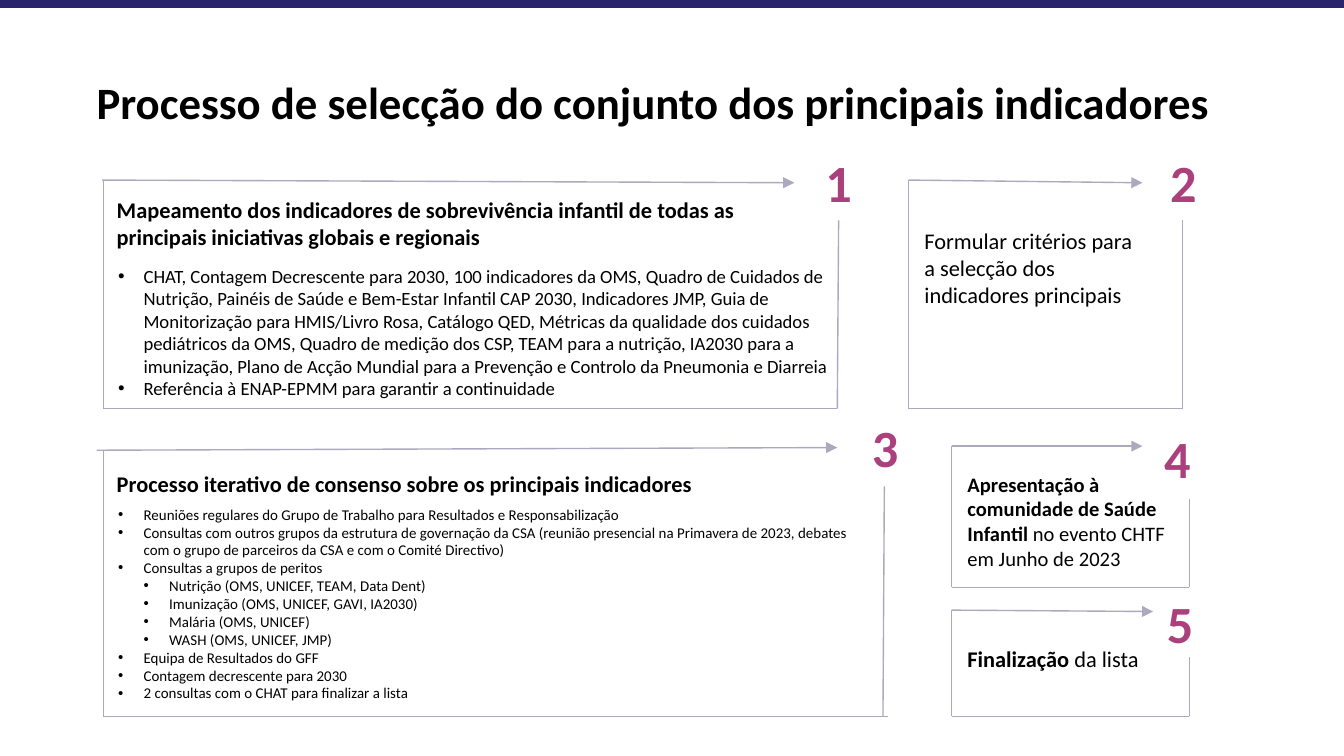
from lxml.etree import SubElement
from pptx import Presentation
from pptx.dml.color import RGBColor
from pptx.enum.shapes import MSO_CONNECTOR, MSO_SHAPE
from pptx.enum.text import MSO_ANCHOR, PP_ALIGN
from pptx.oxml.ns import qn
from pptx.util import Inches, Pt

FONT = "Calibri"
BLACK, LILAC, MAGENTA, NAVY = "000000", "ACA9BE", "AA417C", "2A246C"
INDENT = 0.19

SOURCES = [
    ("CHAT, Contagem Decrescente para 2030, 100 indicadores da OMS, Quadro de Cuidados de "
     "Nutrição, Painéis de Saúde e Bem-Estar Infantil CAP 2030, Indicadores JMP, Guia de "
     "Monitorização para HMIS/Livro Rosa, Catálogo QED, Métricas da qualidade dos cuidados "
     "pediátricos da OMS, Quadro de medição dos CSP, TEAM para a nutrição, IA2030 para a "
     "imunização, Plano de Acção Mundial para a Prevenção e Controlo da Pneumonia e Diarreia", 0),
    ("Referência à ENAP-EPMM para garantir a continuidade", 0),
]
CONSULTATIONS = [
    ("Reuniões regulares do Grupo de Trabalho para Resultados e Responsabilização", 0),
    ("Consultas com outros grupos da estrutura de governação da CSA (reunião presencial na "
     "Primavera de 2023, debates com o grupo de parceiros da CSA e com o Comité Directivo)", 0),
    ("Consultas a grupos de peritos", 0),
    ("Nutrição (OMS, UNICEF, TEAM, Data Dent)", 1),
    ("Imunização (OMS, UNICEF, GAVI, IA2030)", 1),
    ("Malária (OMS, UNICEF)", 1),
    ("WASH (OMS, UNICEF, JMP)", 1),
    ("Equipa de Resultados do GFF", 0),
    ("Contagem decrescente para 2030", 0),
    ("2 consultas com o CHAT para finalizar a lista", 0),
]


def color(value):
    """Turn a hex string into a colour."""
    return RGBColor.from_string(value)


def add_span(para, text, size=12, bold=False, fill=BLACK):
    """Append one formatted run to a paragraph."""
    span = para.add_run()
    span.text = text
    span.font.name, span.font.size, span.font.bold = FONT, Pt(size), bold
    span.font.color.rgb = color(fill)


def add_box(page, area, inset=0.05, anchor=MSO_ANCHOR.TOP):
    """Add an empty wrapping text box and return its text frame."""
    frame = page.shapes.add_textbox(*map(Inches, area)).text_frame
    frame.word_wrap = True
    frame.vertical_anchor = anchor
    frame.margin_left = frame.margin_right = Inches(0.1)
    frame.margin_top = frame.margin_bottom = Inches(inset)
    return frame


def add_text(page, text, area, rest="", align=PP_ALIGN.LEFT, size=12, bold=False,
             fill=BLACK, **layout):
    """Add a one-paragraph text box, with an optional regular-weight ending."""
    para = add_box(page, area, **layout).paragraphs[0]
    para.alignment = align
    add_span(para, text, size, bold, fill)
    if rest:
        add_span(para, rest, size, fill=fill)


def add_bullets(page, items, area, size):
    """Add a bulleted list of (text, level) items."""
    frame = add_box(page, area)
    for index, (text, level) in enumerate(items):
        para = frame.add_paragraph() if index else frame.paragraphs[0]
        para.level = level
        properties = para._p.get_or_add_pPr()
        properties.set("marL", str(Inches(INDENT * (level + 1))))
        properties.set("indent", str(-Inches(INDENT)))
        bullet_color = SubElement(properties, qn("a:buClr"))
        SubElement(bullet_color, qn("a:srgbClr"), val=BLACK)
        SubElement(properties, qn("a:buFont"), typeface="Arial")
        SubElement(properties, qn("a:buChar"), char="•")
        add_span(para, text, size)


def add_line(page, start, end, arrow=False):
    """Draw a thin straight line, with an arrowhead at its end if asked."""
    line = page.shapes.add_connector(MSO_CONNECTOR.STRAIGHT, *map(Inches, start + end))
    line.line.color.rgb = color(LILAC)
    line.line.width = Pt(0.75)
    if arrow:
        SubElement(line.get_or_add_ln(), qn("a:tailEnd"), type="triangle")
    SubElement(line._element.spPr, qn("a:effectLst"))


def add_step(page, number, arrow, left, right, bottom, side_top, badge, corner=None, lean=0):
    """Draw an open frame with an arrow on top and its number at the gap."""
    start, end = arrow
    add_line(page, start, end, arrow=True)
    add_line(page, (left, start[1]), (left, bottom))
    add_line(page, (corner or right, bottom), (left, bottom))
    add_line(page, (right + lean, side_top), (right, bottom))
    add_text(page, str(number), badge, align=PP_ALIGN.CENTER, size=28, bold=True, fill=MAGENTA)


def add_band(page, width):
    """Draw the dark band along the top edge."""
    band = page.shapes.add_shape(MSO_SHAPE.RECTANGLE, 0, 0, width, Inches(0.06))
    band.shadow.inherit = False
    band.fill.solid()
    band.fill.fore_color.rgb = color(NAVY)
    band.line.fill.background()


def main():
    """Build and save the slide."""
    deck = Presentation()
    deck.slide_width = Inches(10)
    deck.slide_height = Inches(10 * 9 / 16)
    page = deck.slides.add_slide(deck.slide_layouts[6])
    add_band(page, deck.slide_width)
    add_text(page, "Processo de selecção do conjunto dos principais indicadores",
             (0.62, 0.44, 8.76, 0.63), size=24, bold=True, inset=0.1, anchor=MSO_ANCHOR.MIDDLE)

    add_step(page, 1, ((0.76, 1.34), (5.91, 1.36)), 0.77, 6.23, 3.04, 1.64,
             (5.91, 1.07, 0.66, 0.57), lean=0.01)
    add_text(page, "Mapeamento dos indicadores de sobrevivência infantil de todas as "
             "principais iniciativas globais e regionais", (0.77, 1.41, 5.15, 0.5), bold=True)
    add_bullets(page, SOURCES, (0.78, 1.92, 5.51, 1.11), size=10)

    add_step(page, 2, ((6.76, 1.34), (8.5, 1.36)), 6.76, 8.8, 3.04, 1.64,
             (8.5, 1.07, 0.61, 0.57))
    add_text(page, "Formular critérios para a selecção dos indicadores principais",
             (6.78, 1.64, 1.86, 0.5))

    add_step(page, 3, ((0.72, 3.35), (6.23, 3.33)), 0.77, 6.57, 5.33, 3.62,
             (6.23, 3.04, 0.71, 0.57), corner=6.61, lean=0.01)
    add_text(page, "Processo iterativo de consenso sobre os principais indicadores",
             (0.77, 3.45, 5.15, 0.3), bold=True)
    add_bullets(page, CONSULTATIONS, (0.78, 3.71, 5.81, 1.58), size=8)

    add_step(page, 4, ((7.08, 3.32), (8.5, 3.32)), 7.08, 8.85, 4.37, 3.71,
             (8.5, 3.12, 0.52, 0.57))
    add_text(page, "Apresentação à comunidade de Saúde Infantil ", (7.1, 3.46, 1.77, 0.84),
             rest="no evento CHTF em Junho de 2023", size=11, bold=True)

    add_step(page, 5, ((7.08, 4.54), (8.58, 4.55)), 7.08, 8.85, 5.33, 4.89,
             (8.52, 4.35, 0.52, 0.57))
    add_text(page, "Finalização", (7.1, 4.75, 1.75, 0.3), rest=" da lista", bold=True)
    deck.save("out.pptx")


if __name__ == "__main__":
    main()
